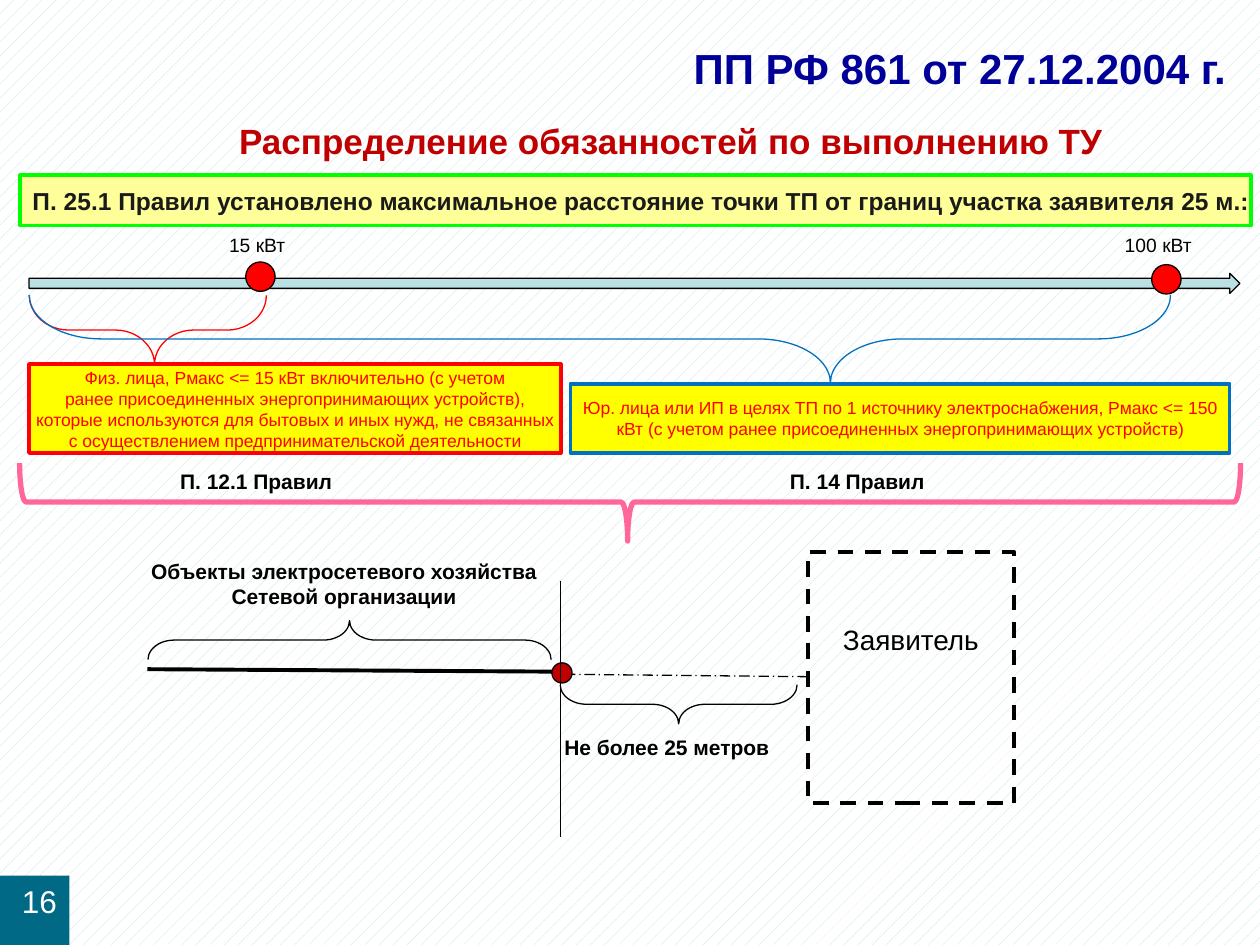
from dataclasses import dataclass

from lxml.etree import SubElement
from pptx import Presentation
from pptx.dml.color import RGBColor
from pptx.enum.dml import MSO_LINE_DASH_STYLE as Dash, MSO_PATTERN_TYPE as Pattern
from pptx.enum.shapes import MSO_CONNECTOR_TYPE as Link, MSO_SHAPE as Kind
from pptx.enum.text import MSO_ANCHOR as Anchor, PP_ALIGN as Align
from pptx.oxml.ns import qn
from pptx.util import Pt


@dataclass(frozen=True)
class Theme:
    font: str = "Arial"
    black: str = "000000"
    white: str = "FFFFFF"
    ink: str = "1A1A1A"
    navy: str = "000099"
    dark: str = "C00000"
    red: str = "FF0000"
    blue: str = "0070C0"
    pink: str = "FF6699"
    green: str = "00FF00"
    cream: str = "FFFF99"
    yellow: str = "FFFF00"
    pale: str = "BBE0E3"
    teal: str = "006986"
    title: int = 24
    head: int = 20
    page: int = 18
    name: int = 16
    rule: int = 14
    label: int = 12
    mark: int = 11
    small: int = 10
    thin: float = 0.75
    thick: float = 2.25


T = Theme()


@dataclass(frozen=True)
class Box:
    x: float
    y: float
    w: float
    h: float

    def sub(self, x, y, w, h):
        return Box(self.x + x, self.y + y, w, h)

    def pts(self):
        return [Pt(v) for v in (self.x, self.y, self.w, self.h)]


def color(code):
    return RGBColor.from_string(code)


def write(shape, text, size=T.label, ink=T.black, bold=False, align=Align.LEFT,
          anchor=Anchor.TOP, wrap=True, top=3.6, right=7.2):
    frame = shape.text_frame
    frame.word_wrap = wrap
    frame.vertical_anchor = anchor
    frame.margin_top, frame.margin_right = Pt(top), Pt(right)
    for i, line in enumerate(text.split("\n")):
        para = frame.add_paragraph() if i else frame.paragraphs[0]
        para.alignment = align
        run = para.add_run()
        run.text = line
        font = run.font
        font.name, font.size, font.bold = T.font, Pt(size), bold
        font.color.rgb = color(ink)


def label(slide, box, text, **form):
    write(slide.shapes.add_textbox(*box.pts()), text, **form)


def stroke(line, ink, width, dash=None):
    line.color.rgb = color(ink)
    line.width = Pt(width)
    if dash:
        line.dash_style = dash


def draw(slide, kind, box, fill=None, ink=None, width=T.thin, dash=None, adj=()):
    shape = slide.shapes.add_shape(kind, *box.pts())
    shape.shadow.inherit = False
    if fill:
        shape.fill.solid()
        shape.fill.fore_color.rgb = color(fill)
    else:
        shape.fill.background()
    if ink:
        stroke(shape.line, ink, width, dash)
    else:
        shape.line.fill.background()
    for i, value in enumerate(adj):
        shape.adjustments[i] = value
    return shape


def brace(slide, box, adj, ink=T.black, width=T.thin, turn=90):
    """Fit a turned brace into the box it covers on the slide."""
    gap = (box.w - box.h) / 2
    frame = box.sub(gap, -gap, box.h, box.w)
    shape = draw(slide, Kind.RIGHT_BRACE, frame, ink=ink, width=width, adj=adj)
    shape.rotation = turn


def link(slide, box, width=T.thin, dash=None):
    ends = (box.x, box.y, box.x + box.w, box.y + box.h)
    line = slide.shapes.add_connector(Link.STRAIGHT, *[Pt(v) for v in ends])
    stroke(line.line, T.black, width, dash)
    SubElement(line._element.spPr, qn("a:effectLst"))


def header(slide, box):
    label(slide, box.sub(108.3, 0, 594.7, 36.7), "ПП РФ 861 от 27.12.2004 г.",
          size=T.title, ink=T.navy, bold=True, align=Align.RIGHT,
          anchor=Anchor.MIDDLE, right=13.9)
    label(slide, box.sub(74.5, 41, 594.7, 34.6),
          "Распределение обязанностей по выполнению ТУ", size=T.head,
          ink=T.dark, bold=True, align=Align.CENTER, anchor=Anchor.BOTTOM)
    rule = draw(slide, Kind.RECTANGLE, box.sub(0, 79.9, box.w, 28.8),
                T.cream, T.green, 2)
    write(rule, "П. 25.1 Правил установлено максимальное расстояние точки ТП "
          "от границ участка заявителя 25 м.:", size=T.rule, ink=T.ink,
          bold=True, anchor=Anchor.MIDDLE, wrap=False)


def scale(slide, box):
    draw(slide, Kind.RIGHT_ARROW, box.sub(0, 26.4, box.w, 11.5), T.pale,
         T.black, adj=(0.5, 0.5))
    marks = [(123.8, 19.9, 107.2, "15 кВт"), (641.5, 21.4, 619, "100 кВт")]
    for dot, top, left, text in marks:
        draw(slide, Kind.OVAL, box.sub(dot, top, 16.8, 16.8), T.red, T.black)
        label(slide, box.sub(left, 0, 62, 20.9), text, size=T.mark)
    brace(slide, box.sub(0.2, 39, 135.4, 39.6), (0.567, 0.472), T.red)
    brace(slide, box.sub(0, 38.7, 652.3, 50.4), (0.819, 0.298), T.blue)


def cases(slide, box):
    person = ("Физ. лица, Рмакс <= 15 кВт включительно (с учетом\n"
              "ранее присоединенных энергопринимающих устройств),\n"
              "которые используются для бытовых и иных нужд, не связанных\n"
              "с осуществлением предпринимательской деятельности")
    firm = ("Юр. лица или ИП в целях ТП по 1 источнику электроснабжения, "
            "Рмакс <= 150\n"
            "кВт (с учетом ранее присоединенных энергопринимающих устройств)")
    parts = [(5.4, 303.8, 50.8, T.red, person, 84.6, "П. 12.1 Правил"),
             (314.8, 376.6, 39.6, T.blue, firm, 433.1, "П. 14 Правил")]
    for left, wide, high, ink, text, place, rule in parts:
        card = draw(slide, Kind.RECTANGLE, box.sub(left, 50.8 - high, wide, high),
                    T.yellow, ink, T.thick)
        write(card, text, size=T.small, ink=T.red, align=Align.CENTER,
              anchor=Anchor.MIDDLE, wrap=False)
        label(slide, box.sub(place, 56.2, 118, 21.6), rule, bold=True)
    brace(slide, box.sub(0, 56.5, box.w, 44.6), (0.083, 0.502), T.pink, 3)


def scheme(slide, box):
    # Applicant's plot
    plot = draw(slide, Kind.RECTANGLE, box.sub(383, 0, 118.1, box.h),
                ink=T.black, width=T.thick, dash=Dash.DASH)
    write(plot, "Заявитель", size=T.name, align=Align.CENTER, top=40.4)

    # Connection line and its border point
    link(slide, box.sub(383, 71.3, -141.1, -1.4), dash=Dash.LONG_DASH_DOT)
    draw(slide, Kind.OVAL, box.sub(236.9, 63.4, 11.5, 11.5), T.dark, T.black)
    link(slide, box.sub(241.9, 16.6, 0, 146.2))
    brace(slide, box.sub(241.6, 75.9, 135.4, 22.3), (0.674, 0.5))
    label(slide, box.sub(236.9, 100.8, 146.2, 21.6), "Не более 25 метров",
          bold=True)

    # Grid side
    link(slide, box.sub(236.9, 68.4, -231.1, -1.4), T.thick)
    label(slide, box.sub(0, 0, 236.2, 36.7),
          "Объекты электросетевого хозяйства Сетевой организации",
          bold=True, align=Align.CENTER)
    brace(slide, box.sub(6.1, 39.2, 230.4, 22.3), (0.674, 0.5), turn=270)


def number(slide, box):
    tile = draw(slide, Kind.RECTANGLE, box, T.teal)
    write(tile, "16", size=T.page, ink=T.white, align=Align.RIGHT)


def main():
    deck = Presentation()
    deck.slide_width, deck.slide_height = Pt(720), Pt(540)
    slide = deck.slides.add_slide(deck.slide_layouts[6])
    back = slide.background.fill
    back.patterned()
    back.pattern = Pattern.PERCENT_10
    back.fore_color.rgb = color(T.pale)
    back.back_color.rgb = color(T.white)

    header(slide, Box(11.5, 20.2, 703.4, 108.7))
    scale(slide, Box(16.6, 129.8, 691.9, 89))
    cases(slide, Box(11.2, 208.1, 697.7, 101.1))
    scheme(slide, Box(78.5, 315.4, 501.1, 143.3))
    number(slide, Box(0, 500.4, 39.6, 39.6))
    deck.save("out.pptx")


if __name__ == "__main__":
    main()
